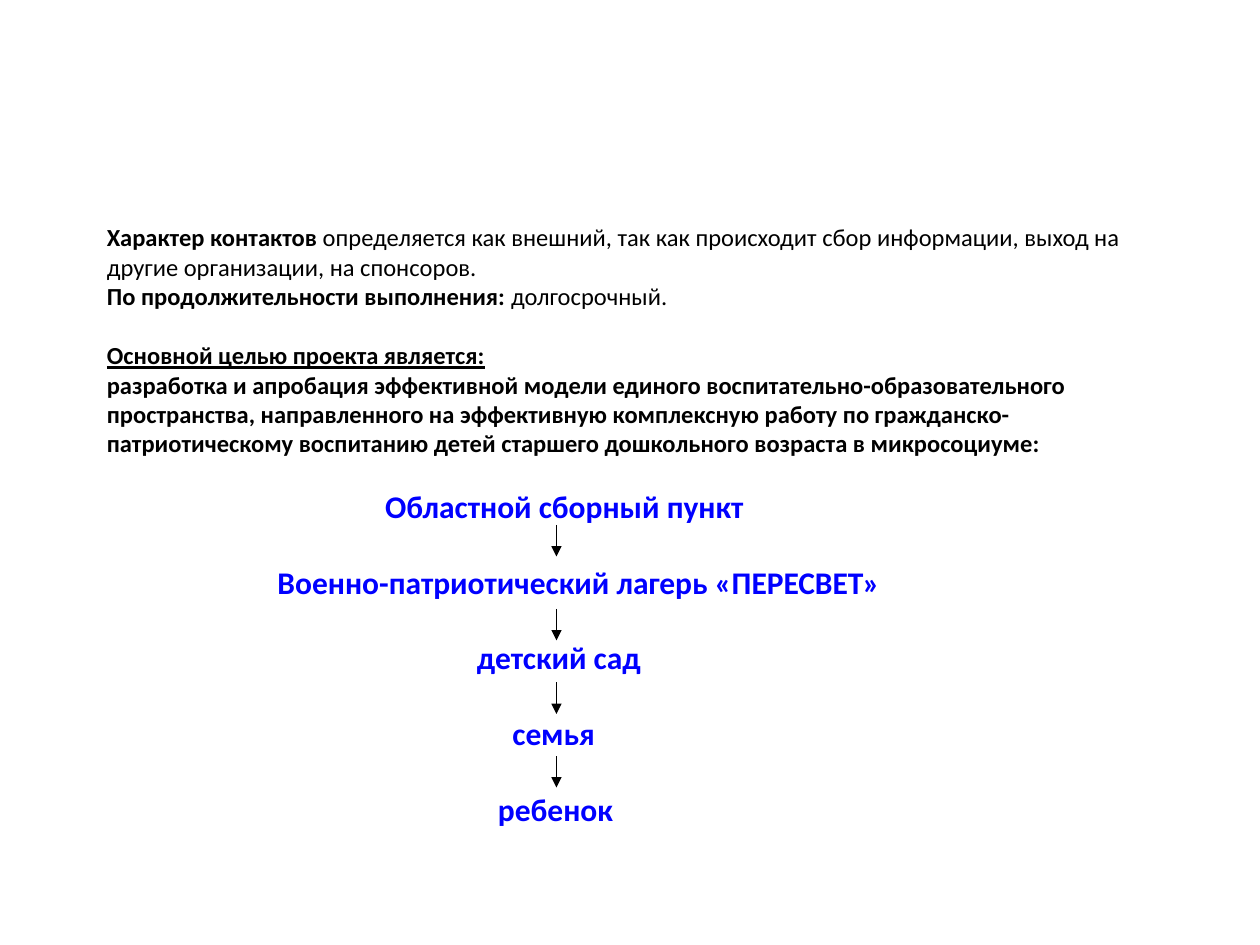
"""Build the slide on the project's contacts, duration, goal and chain of participants."""
from dataclasses import dataclass

from lxml import etree
from pptx import Presentation
from pptx.dml.color import RGBColor
from pptx.enum.shapes import MSO_CONNECTOR
from pptx.enum.text import MSO_ANCHOR, PP_ALIGN
from pptx.oxml.ns import qn
from pptx.util import Pt

PX = 9525


@dataclass(frozen=True)
class Theme:
    font: str = "Calibri"
    ink: RGBColor = RGBColor(0, 0, 0)
    accent: RGBColor = RGBColor(0, 0, 255)
    body_size: int = 14
    chain_size: int = 18
    arrow_width: float = 0.75


theme = Theme()


def add_run(paragraph, text, size, color, bold, underline=False):
    run = paragraph.add_run()
    run.text = text
    font = run.font
    font.name = theme.font
    font.size = Pt(size)
    font.color.rgb = color
    font.bold = bold
    font.underline = underline


presentation = Presentation()
presentation.slide_width = 960 * PX
presentation.slide_height = 720 * PX
slide = presentation.slides.add_slide(presentation.slide_layouts[6])

description = slide.shapes.add_textbox(72 * PX, 160 * PX, 816 * PX, 480 * PX).text_frame
description.word_wrap = True
description.vertical_anchor = MSO_ANCHOR.MIDDLE

statements = [
    (0, [("Характер контактов", True, False),
         (" определяется как внешний, так как происходит сбор информации, "
          "выход на другие организации, на спонсоров.", False, False)]),
    (0, [("По продолжительности выполнения:", True, False),
         (" долгосрочный.", False, False)]),
    (16.8, [("Основной целью проекта является:", True, True)]),
    (0, [("разработка и апробация эффективной модели единого "
          "воспитательно-образовательного пространства, направленного на "
          "эффективную комплексную работу по гражданско-патриотическому "
          "воспитанию детей старшего дошкольного возраста в микросоциуме:", True, False)]),
]
for index, (gap, parts) in enumerate(statements):
    statement = description.add_paragraph() if index else description.paragraphs[0]
    statement.alignment = PP_ALIGN.LEFT
    statement.space_before = Pt(gap)
    for text, bold, underline in parts:
        add_run(statement, text, theme.body_size, theme.ink, bold, underline)

chain = [
    ("Областной сборный пункт", 212, 16.8),
    ("Военно-патриотический лагерь «ПЕРЕСВЕТ»", 130, 21.6),
    ("детский сад", 282, 21.6),
    ("семья", 309, 21.6),
    ("ребенок", 298, 21.6),
]
for text, indent, gap in chain:
    link = description.add_paragraph()
    link.alignment = PP_ALIGN.LEFT
    link.space_before = Pt(gap)
    properties = link._p.get_or_add_pPr()
    properties.set("marL", str(indent * PX))
    properties.set("indent", "0")
    add_run(link, text, theme.chain_size, theme.accent, True)

for top in (400, 464, 520, 576):
    arrow = slide.shapes.add_connector(
        MSO_CONNECTOR.STRAIGHT, 424 * PX, top * PX, 424 * PX, (top + 24) * PX)
    arrow.line.color.rgb = theme.ink
    arrow.line.width = Pt(theme.arrow_width)
    etree.SubElement(arrow.line._get_or_add_ln(), qn("a:tailEnd"), type="triangle")
    etree.SubElement(arrow._element.spPr, qn("a:effectLst"))

presentation.save("out.pptx")
